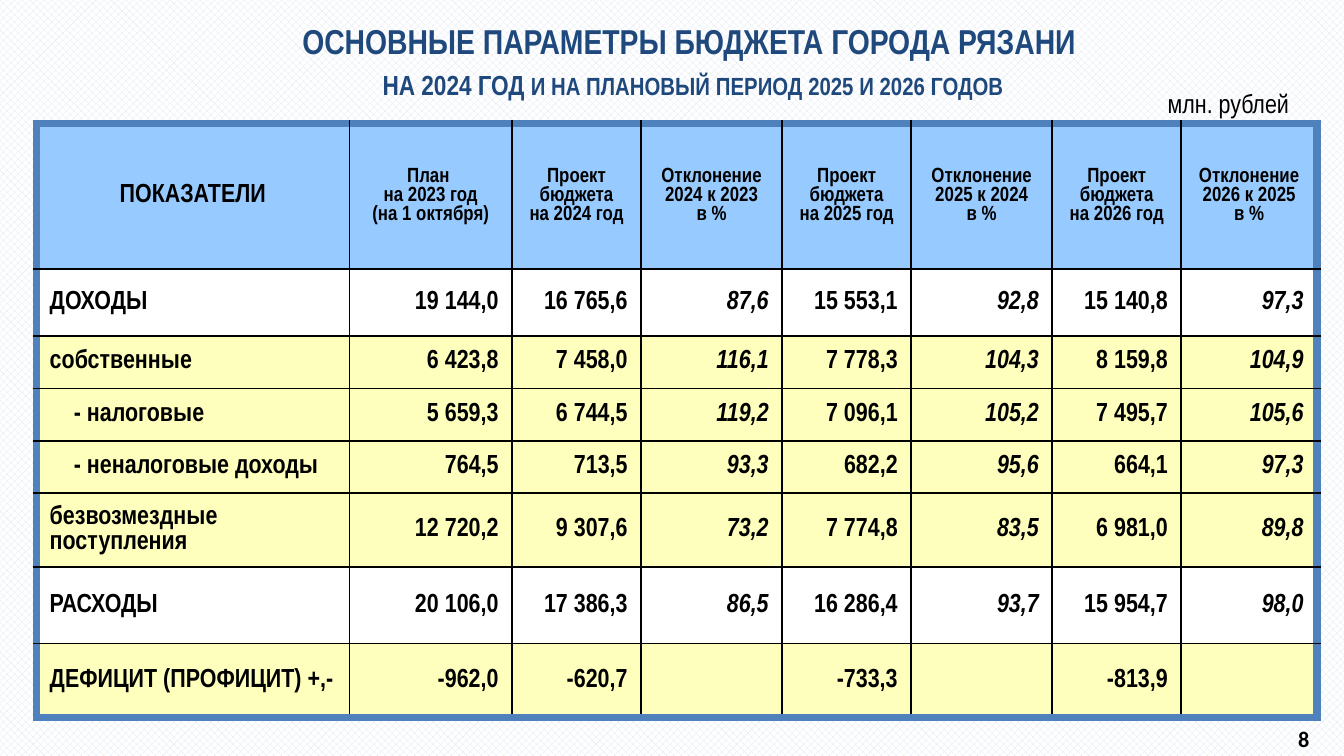
from typing import NamedTuple

from lxml.etree import SubElement
from pptx import Presentation
from pptx.dml.color import RGBColor
from pptx.enum.dml import MSO_PATTERN
from pptx.enum.text import MSO_ANCHOR, MSO_AUTO_SIZE, PP_ALIGN
from pptx.oxml.ns import qn
from pptx.util import Inches, Pt

BLACK, NAVY, FRAME = "000000", "1F497D", "4F81BD"
HEADER, WHITE, YELLOW = "97CBFF", "FFFFFF", "FFFFBD"
NARROW = "Arial Narrow"

COL_WIDTHS = [2.33, 1.21, 0.96, 1.05, 0.96, 1.05, 0.96, 1.01]
HEADER_HEIGHT = 1.08
DEVIATION_COLS = (3, 5, 7)


class Row(NamedTuple):
    label: str
    values: list[str]
    height: float
    fill: str = YELLOW
    indent: float = 0


class Label(NamedTuple):
    text: str
    box: tuple[float, float, float, float]
    font: dict
    anchor: MSO_ANCHOR


HEADINGS = ["ПОКАЗАТЕЛИ", "План \nна 2023 год\n(на 1 октября)"]
for year in (2024, 2025, 2026):
    HEADINGS += [f"Проект бюджета\nна {year} год",
                 f"Отклонение\n{year} к {year - 1}\nв %"]

ROWS = [
    Row("ДОХОДЫ", ["19 144,0", "16 765,6", "87,6", "15 553,1", "92,8", "15 140,8", "97,3"],
        0.5, WHITE),
    Row("собственные", ["6 423,8", "7 458,0", "116,1", "7 778,3", "104,3", "8 159,8", "104,9"],
        0.39),
    Row("- налоговые", ["5 659,3", "6 744,5", "119,2", "7 096,1", "105,2", "7 495,7", "105,6"],
        0.39, indent=0.18),
    Row("- неналоговые доходы", ["764,5", "713,5", "93,3", "682,2", "95,6", "664,1", "97,3"],
        0.39, indent=0.18),
    Row("безвозмездные поступления",
        ["12 720,2", "9 307,6", "73,2", "7 774,8", "83,5", "6 981,0", "89,8"], 0.55),
    Row("РАСХОДЫ", ["20 106,0", "17 386,3", "86,5", "16 286,4", "93,7", "15 954,7", "98,0"],
        0.57, WHITE),
    Row("ДЕФИЦИТ (ПРОФИЦИТ) +,-", ["-962,0", "-620,7", "", "-733,3", "", "-813,9", ""], 0.55),
]

LABELS = [
    Label("млн. рублей", (8.47, 0.61, 1.34, 0.31),
          {"name": NARROW, "size": Pt(14)}, MSO_ANCHOR.MIDDLE),
    Label("8", (9.44, 5.35, 0.52, 0.26),
          {"name": "Calibri", "size": Pt(11.9), "bold": True}, MSO_ANCHOR.TOP),
]


def rgb(color: str) -> RGBColor:
    return RGBColor.from_string(color)


def style(font, color: str = BLACK, **values) -> None:
    for name, value in values.items():
        setattr(font, name, value)
    font.color.rgb = rgb(color)


def set_borders(cell, widths: dict[str, tuple[str, float]]) -> None:
    """Draw the sides L, R, T, B, given in that order as (color, points)."""
    tc_pr = cell._tc.get_or_add_tcPr()
    for side, (color, width) in widths.items():
        ln = SubElement(tc_pr, qn(f"a:ln{side}"), w=str(Pt(width)))
        fill = SubElement(ln, qn("a:solidFill"))
        SubElement(fill, qn("a:srgbClr"), val=color)


def fill_cell(cell, text: str, fill: str, align: PP_ALIGN, size: float,
              italic: bool = False, indent: float = 0) -> None:
    cell.margin_left, cell.margin_right = Inches(0.1 + indent), Inches(0.1)
    cell.margin_top = cell.margin_bottom = Inches(0.04)
    cell.vertical_anchor = MSO_ANCHOR.MIDDLE
    cell.fill.solid()
    cell.fill.fore_color.rgb = rgb(fill)
    tf = cell.text_frame
    tf.text = text
    for p in tf.paragraphs:
        p.alignment = align
        for r in p.runs:
            style(r.font, name=NARROW, size=Pt(size), bold=True, italic=italic)


def add_budget_table(s) -> None:
    heights = [HEADER_HEIGHT] + [row.height for row in ROWS]
    table = s.shapes.add_table(len(heights), len(COL_WIDTHS), Inches(0.27), Inches(0.92),
                               Inches(sum(COL_WIDTHS)), Inches(sum(heights))).table
    table.first_row = table.horz_banding = False
    for column, width in zip(table.columns, COL_WIDTHS):
        column.width = Inches(width)
    for table_row, height in zip(table.rows, heights):
        table_row.height = Inches(height)

    thick, thin = (FRAME, 4.5), (BLACK, 1)
    last_row, last_col = len(heights) - 1, len(COL_WIDTHS) - 1
    for i in range(len(heights)):
        for j in range(len(COL_WIDTHS)):
            set_borders(table.cell(i, j), {
                "L": thick if j == 0 else thin,
                "R": thick if j == last_col else thin,
                "T": thick if i == 0 else thin,
                "B": thick if i == last_row else thin,
            })

    for j, heading in enumerate(HEADINGS):
        fill_cell(table.cell(0, j), heading, HEADER, PP_ALIGN.CENTER, 11 if j else 14)
    for i, row in enumerate(ROWS, 1):
        fill_cell(table.cell(i, 0), row.label, row.fill, PP_ALIGN.LEFT, 14, indent=row.indent)
        for j, value in enumerate(row.values, 1):
            fill_cell(table.cell(i, j), value, row.fill, PP_ALIGN.RIGHT, 14,
                      italic=j in DEVIATION_COLS)


def format_title(title) -> None:
    title.left, title.top = Inches(0.27), Inches(0.14)
    title.width, title.height = Inches(9.77), Inches(0.63)
    tf = title.text_frame
    tf.auto_size = MSO_AUTO_SIZE.NONE
    tf.vertical_anchor = MSO_ANCHOR.MIDDLE
    p = tf.paragraphs[0]
    p.alignment = PP_ALIGN.CENTER
    for text, size, small_caps in (
            ("ОСНОВНЫЕ ПАРАМЕТРЫ БЮДЖЕТА ГОРОДА РЯЗАНИ ", 18.5, False),
            ("на 2024 год ", 18.5, True),
            ("и на плановый период 2025 и 2026 годов", 16.6, True)):
        r = p.add_run()
        r.text = text
        style(r.font, NAVY, name=NARROW, size=Pt(size), bold=True)
        if small_caps:
            r.font._element.set("cap", "small")
        else:
            p.add_line_break()


def add_label(s, label: Label) -> None:
    tf = s.shapes.add_textbox(*map(Inches, label.box)).text_frame
    tf.word_wrap = True
    tf.vertical_anchor = label.anchor
    p = tf.paragraphs[0]
    p.alignment = PP_ALIGN.CENTER
    r = p.add_run()
    r.text = label.text
    style(r.font, **label.font)


def main() -> None:
    prs = Presentation()
    prs.slide_width = Inches(10)
    prs.slide_height = prs.slide_width * 9 // 16
    s = prs.slides.add_slide(prs.slide_layouts[5])
    background = s.background.fill
    background.patterned()
    background.pattern = MSO_PATTERN.LARGE_CHECKER_BOARD
    background.fore_color.rgb = rgb("DCE6F2")
    background.back_color.rgb = rgb(WHITE)

    format_title(s.shapes.title)
    add_budget_table(s)
    for label in LABELS:
        add_label(s, label)
    prs.save("out.pptx")


if __name__ == "__main__":
    main()
